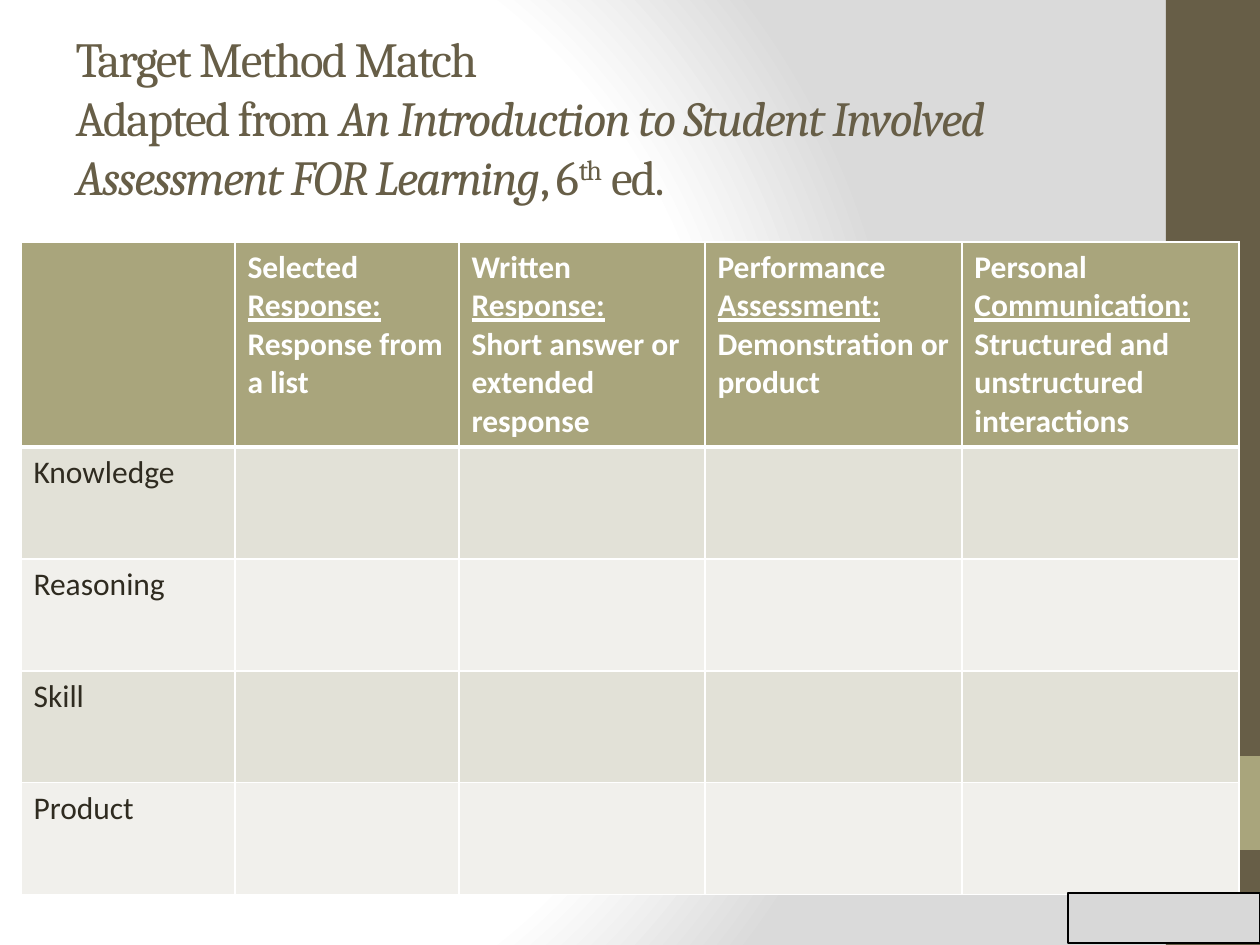
from pptx import Presentation
from pptx.dml.color import RGBColor
from pptx.enum.shapes import MSO_SHAPE
from pptx.enum.text import MSO_ANCHOR, MSO_AUTO_SIZE, PP_ALIGN
from pptx.oxml import parse_xml
from pptx.oxml.ns import nsdecls
from pptx.util import Pt

RECTANGLE = MSO_SHAPE.RECTANGLE
MIDDLE = MSO_ANCHOR.MIDDLE
NO_AUTOFIT = MSO_AUTO_SIZE.NONE
LEFT = PP_ALIGN.LEFT
SCALE = 914400 / 126
COLORS = {
    "brown": "675E47", "olive": "A9A57C", "dark": "2F2B20", "white": "FFFFFF",
    "band": "E2E1D7", "light": "F1F0EC", "gray": "D8D8D8", "edge": "DADADA",
    "black": "000000",
}


def px(*lengths):
    return [round(length * SCALE) for length in lengths]


def add_span(para, text, color, formats):
    span = para.add_run()
    span.text = text
    span.font.color.rgb = RGBColor.from_string(COLORS[color])
    for name, value in formats.items():
        setattr(span.font, name, value)
    return span


deck = Presentation()
deck.slide_width, deck.slide_height = px(1260, 945)
page = deck.slides.add_slide(deck.slide_layouts[5])

stops = "".join(
    f'<a:gs pos="{position * 1000}"><a:srgbClr val="{COLORS[color]}"/></a:gs>'
    for position, color in [(0, "white"), (75, "white"), (100, "edge")]
)
page.element.cSld.insert(0, parse_xml(
    f'<p:bg {nsdecls("p", "a")}><p:bgPr><a:gradFill rotWithShape="1">'
    f'<a:gsLst>{stops}</a:gsLst><a:path path="circle">'
    '<a:fillToRect l="20000" t="50000" r="100000" b="50000"/></a:path>'
    '</a:gradFill><a:effectLst/></p:bgPr></p:bg>'
))

title = page.shapes.title
title.left, title.top, title.width, title.height = px(63, 38, 1124, 158)
frame = title.text_frame
frame.auto_size = NO_AUTOFIT
frame.word_wrap = True
frame.vertical_anchor = MIDDLE
para = frame.paragraphs[0]
para.alignment = LEFT
title_spans = [
    ("Target Method Match", False, 0),
    ("Adapted from ", False, 0),
    ("An Introduction to Student Involved Assessment FOR Learning", True, 0),
    (", 6", False, 0),
    ("th", False, 30),
    (" ed.", False, 0),
]
for index, (text, italic, raised) in enumerate(title_spans):
    if index == 1:
        para.add_line_break()
    span = add_span(para, text, "brown",
                    {"name": "Cambria", "size": Pt(28), "italic": italic})
    properties = span._r.get_or_add_rPr()
    properties.set("spc", "-100")
    if raised:
        properties.set("baseline", str(raised * 1000))

headers = [
    [],
    [[("Selected ", False), ("Response:", True), (" ", False)],
     [("Response from a list", False)]],
    [[("Written", False)], [("Response:", True), (" ", False)],
     [("Short answer or extended response", False)]],
    [[("Performance ", False), ("Assessment:", True),
      (" Demonstration or product", False)]],
    [[("Personal ", False), ("Communication:", True),
      (" Structured and unstructured interactions", False)]],
]
targets = ["Knowledge", "Reasoning", "Skill", "Product"]
rows = [headers] + [[[[(target, False)]], [], [], [], []] for target in targets]
column_widths = px(214, 224, 246, 257, 277)
row_heights = px(203, 112, 112, 112, 112)

grid = page.shapes.add_table(
    len(rows), len(column_widths), *px(21, 242), sum(column_widths), sum(row_heights)
)
table = grid.table
for column, width in zip(table.columns, column_widths):
    column.width = width
for row, height in zip(table.rows, row_heights):
    row.height = height

for row_index, row in enumerate(rows):
    is_header = row_index == 0
    fill = "olive" if is_header else ("light", "band")[row_index % 2]
    ink = "white" if is_header else "dark"
    borders = {"lnL": 1, "lnR": 1, "lnT": 3 if row_index == 1 else 1,
               "lnB": 3 if is_header else 1}
    for column_index, paragraphs in enumerate(row):
        cell = table.cell(row_index, column_index)
        cell.fill.solid()
        cell.fill.fore_color.rgb = RGBColor.from_string(COLORS[fill])
        for index, (side, points) in enumerate(borders.items()):
            cell._tc.tcPr.insert(index, parse_xml(
                f'<a:{side} {nsdecls("a")} w="{int(Pt(points))}"><a:solidFill>'
                f'<a:srgbClr val="{COLORS["white"]}"/></a:solidFill></a:{side}>'
            ))
        frame = cell.text_frame
        for index, spans in enumerate(paragraphs):
            para = frame.add_paragraph() if index else frame.paragraphs[0]
            for text, underline in spans:
                add_span(para, text, ink, {
                    "name": "Calibri", "size": Pt(18),
                    "bold": is_header, "underline": underline,
                })

panels = [
    ((1166, 0, 94, 945), "brown", None),
    ((1166, 756, 94, 94), "olive", None),
    ((1068, 893, 192, 50), "gray", "black"),
]
for place, fill, line in panels:
    box = page.shapes.add_shape(RECTANGLE, *px(*place))
    box.shadow.inherit = False
    box.fill.solid()
    box.fill.fore_color.rgb = RGBColor.from_string(COLORS[fill])
    if line:
        box.line.color.rgb = RGBColor.from_string(COLORS[line])
        box.line.width = Pt(0.75)
    else:
        box.line.fill.background()
        title._element.addprevious(box._element)

deck.save("out.pptx")
